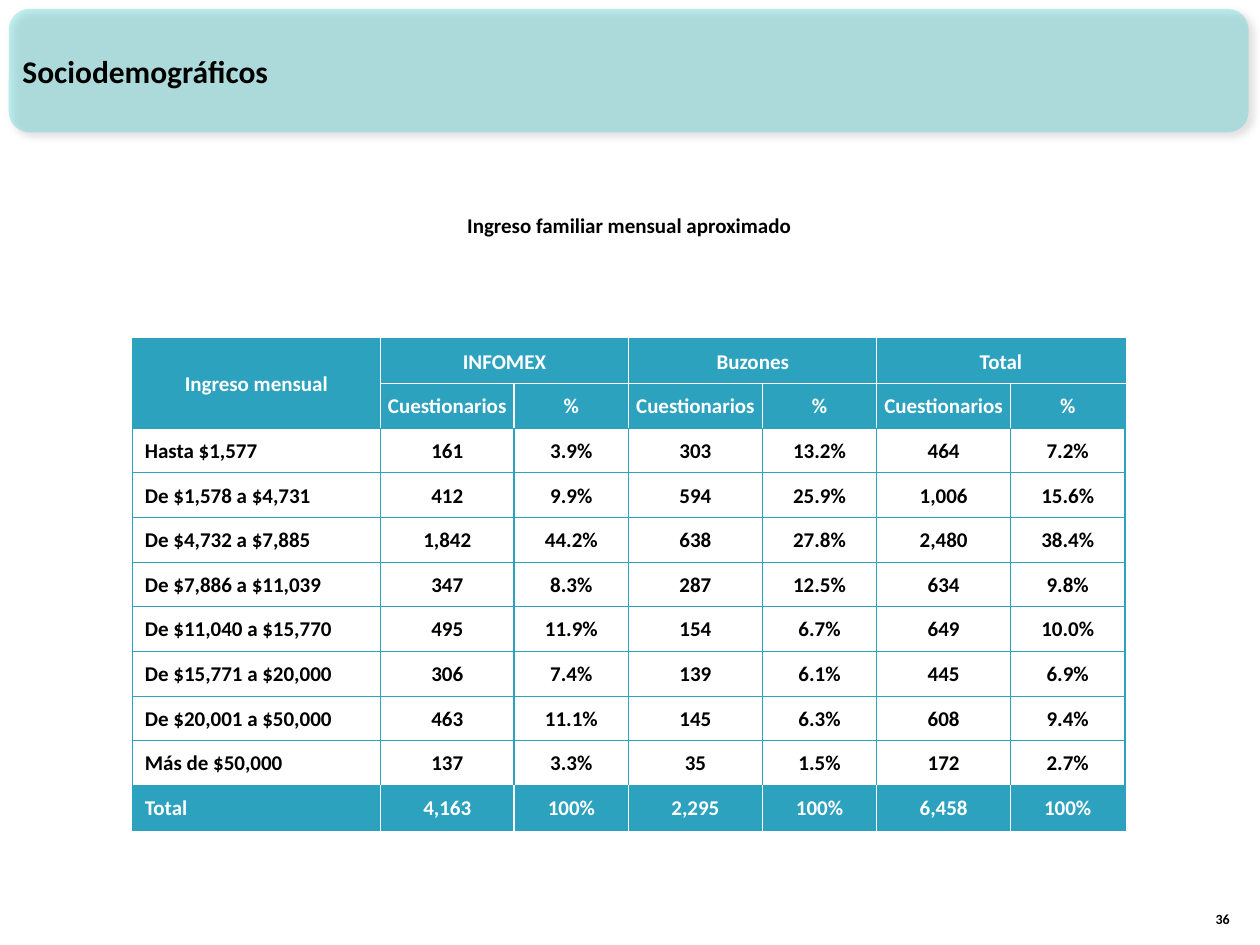
import pptx
import pptx.dml.color
import pptx.enum.shapes
import pptx.enum.text
import pptx.oxml
import pptx.oxml.ns
import pptx.util

Inches = pptx.util.Inches
RGB = pptx.dml.color.RGBColor
ALIGN = pptx.enum.text.PP_ALIGN
ANCHOR = pptx.enum.text.MSO_ANCHOR

AQUA = RGB(0x33, 0xCC, 0xCC)
TEAL = RGB(0x2D, 0xA2, 0xBF)
BLACK = RGB(0, 0, 0)
WHITE = RGB(255, 255, 255)

WIDTHS = [1.97] + [1.06, 0.91] * 3
HEADS = [
    ["Ingreso mensual", "INFOMEX", "", "Buzones", "", "Total", ""],
    [""] + ["Cuestionarios", "%"] * 3,
]
DATA = [
    ["Hasta $1,577", "161", "3.9%", "303", "13.2%", "464", "7.2%"],
    ["De $1,578 a $4,731", "412", "9.9%", "594", "25.9%", "1,006", "15.6%"],
    ["De $4,732 a $7,885", "1,842", "44.2%", "638", "27.8%", "2,480", "38.4%"],
    ["De $7,886 a $11,039", "347", "8.3%", "287", "12.5%", "634", "9.8%"],
    ["De $11,040 a $15,770", "495", "11.9%", "154", "6.7%", "649", "10.0%"],
    ["De $15,771 a $20,000", "306", "7.4%", "139", "6.1%", "445", "6.9%"],
    ["De $20,001 a $50,000", "463", "11.1%", "145", "6.3%", "608", "9.4%"],
    ["Más de $50,000", "137", "3.3%", "35", "1.5%", "172", "2.7%"],
    ["Total", "4,163", "100%", "2,295", "100%", "6,458", "100%"],
]
ROWS = HEADS + DATA


def parse(tag, inner, attrs=""):
    """Make a drawing element from its tag, content and attributes."""
    space = pptx.oxml.ns.nsdecls("a")
    return pptx.oxml.parse_xml(f"<a:{tag} {space} {attrs}>{inner}</a:{tag}>")


def style(par, size, color, align):
    """Set the font and alignment of a paragraph."""
    par.alignment = align
    par.font.name = "Calibri"
    par.font.size = pptx.util.Pt(size)
    par.font.bold = True
    par.font.color.rgb = color


def add_band(slide):
    """Draw the see-through title band with its soft shadow."""
    band = slide.shapes.add_shape(
        pptx.enum.shapes.MSO_SHAPE.ROUNDED_RECTANGLE,
        Inches(0.07), Inches(0.07), Inches(9.84), Inches(0.98))
    band.fill.solid()
    band.fill.fore_color.rgb = AQUA
    band.line.fill.background()
    props = band._element.spPr
    tone = props.find(".//" + pptx.oxml.ns.qn("a:srgbClr"))
    tone.append(parse("alpha", "", 'val="30000"'))
    shade = ('<a:outerShdw blurRad="50800" dist="38100" dir="2700000" algn="tl" '
             'rotWithShape="0"><a:srgbClr val="000000"><a:alpha val="40000"/>'
             '</a:srgbClr></a:outerShdw>')
    props.append(parse("effectLst", shade))


def add_text(slide, text, area, size, align, anchor):
    """Add a wrapped text box with one paragraph."""
    box = slide.shapes.add_textbox(*map(Inches, area))
    frame = box.text_frame
    frame.word_wrap = True
    frame.vertical_anchor = anchor
    frame.text = text
    style(frame.paragraphs[0], size, BLACK, align)


def add_edge(cell, side, color):
    """Draw one border line of a table cell."""
    line = f'<a:solidFill><a:srgbClr val="{color}"/></a:solidFill>'
    props = cell._tc.get_or_add_tcPr()
    props.append(parse(f"ln{side}", line, 'w="9525"'))


def fill_cell(cell, row, col):
    """Write one cell with its fill, text and borders."""
    head = row < len(HEADS)
    dark = head or row == len(ROWS) - 1
    last = col + cell.span_width == len(WIDTHS)
    label = col == 0 and not head
    white = {"L": dark and col > 0, "R": dark and not last,
             "T": row == 1, "B": row == 0 and col > 0}
    for side, light in white.items():
        add_edge(cell, side, WHITE if light else TEAL)
    if dark:
        cell.fill.solid()
        cell.fill.fore_color.rgb = TEAL
    else:
        cell.fill.background()
    cell.margin_left = Inches(0.1 if label else 0.01)
    cell.margin_right = cell.margin_top = Inches(0.01)
    cell.margin_bottom = 0
    cell.vertical_anchor = ANCHOR.MIDDLE
    cell.text = ROWS[row][col]
    style(cell.text_frame.paragraphs[0], 12, WHITE if dark else BLACK,
          ALIGN.LEFT if label else ALIGN.CENTER)


def add_grid(slide):
    """Add the income table with its merged heads."""
    table = slide.shapes.add_table(
        len(ROWS), len(WIDTHS), Inches(1.05), Inches(2.69),
        Inches(sum(WIDTHS)), Inches(3.9)).table
    table.first_row = table.horz_banding = False
    for col, width in zip(table.columns, WIDTHS):
        col.width = Inches(width)
    table.cell(0, 0).merge(table.cell(1, 0))
    for col in range(1, len(WIDTHS), 2):
        table.cell(0, col).merge(table.cell(0, col + 1))
    for row in range(len(ROWS)):
        for col in range(len(WIDTHS)):
            cell = table.cell(row, col)
            if not cell.is_spanned:
                fill_cell(cell, row, col)


def main():
    """Build the slide and save it."""
    deck = pptx.Presentation()
    deck.slide_width, deck.slide_height = Inches(10), Inches(7.5)
    slide = deck.slides.add_slide(deck.slide_layouts[6])
    add_band(slide)
    add_text(slide, "36", (9.46, 7.01, 0.4, 0.4), 8, ALIGN.RIGHT, ANCHOR.BOTTOM)
    add_text(slide, "Sociodemográficos", (0.08, 0.09, 9.17, 0.94), 18,
             ALIGN.LEFT, ANCHOR.MIDDLE)
    add_grid(slide)
    add_text(slide, "Ingreso familiar mensual aproximado",
             (0.81, 1.64, 8.37, 0.3), 12, ALIGN.CENTER, ANCHOR.TOP)
    deck.save("out.pptx")


if __name__ == "__main__":
    main()
